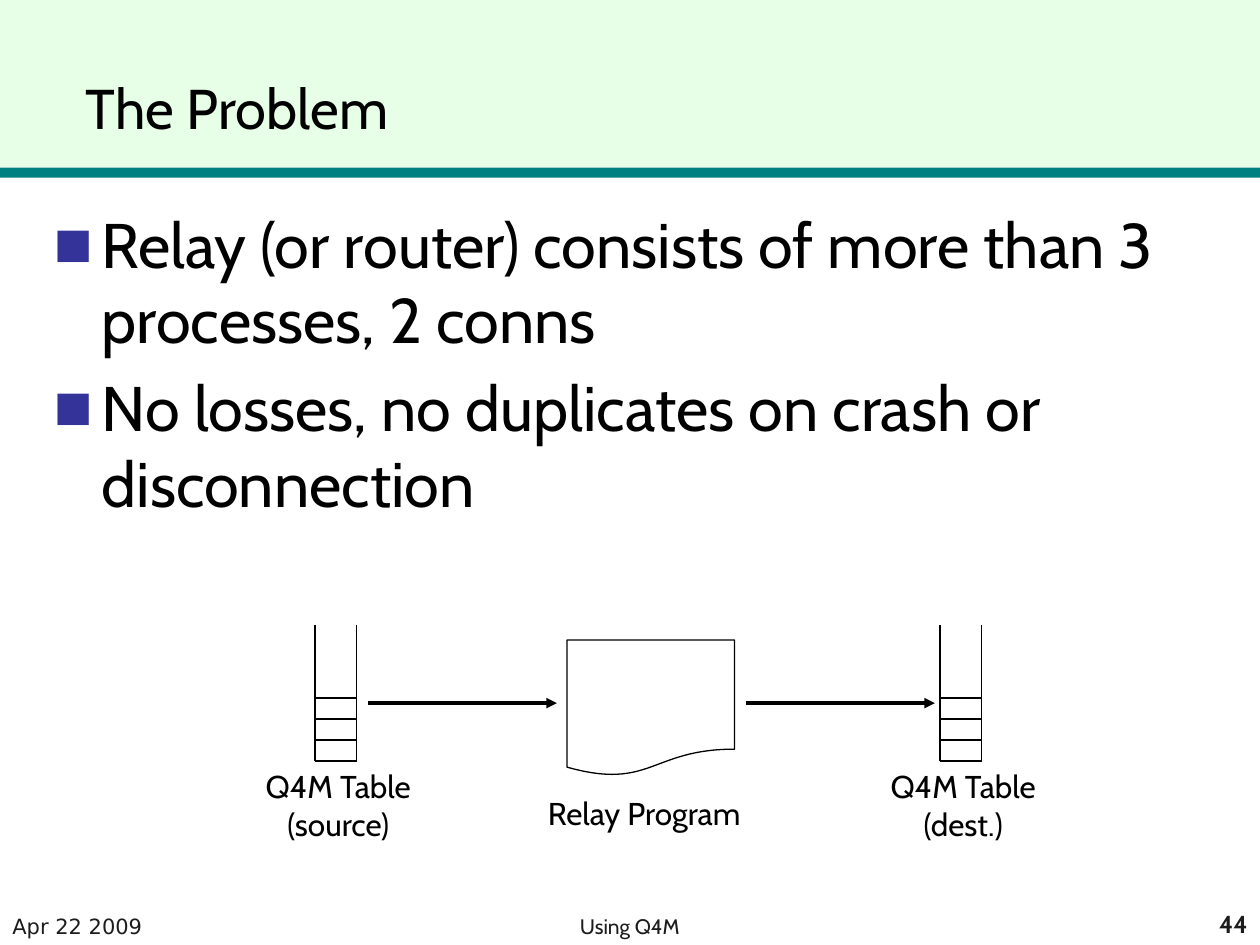
"""Build the slide that states the relay problem between two Q4M tables."""
import lxml.etree
import pptx
import pptx.dml.color
import pptx.enum.dml
import pptx.enum.shapes
import pptx.enum.text
import pptx.oxml
import pptx.oxml.ns
import pptx.util

Inches = pptx.util.Inches
Pt = pptx.util.Pt
RGBColor = pptx.dml.color.RGBColor
Align = pptx.enum.text.PP_ALIGN
Anchor = pptx.enum.text.MSO_ANCHOR
Shape = pptx.enum.shapes.MSO_SHAPE
qn = pptx.oxml.ns.qn

BLACK = RGBColor(0x00, 0x00, 0x00)
WHITE = RGBColor(0xFF, 0xFF, 0xFF)
MINT = RGBColor(0xE7, 0xFF, 0xE7)
TEAL = RGBColor(0x00, 0x80, 0x80)
NAVY = RGBColor(0x33, 0x33, 0x99)
INK = RGBColor(0x1C, 0x1C, 0x1C)
FONT = "Cabin"
PLAIN = "DejaVu Sans"


def add_bullet(para):
    """Give a paragraph a hanging square bullet."""
    props = para._p.get_or_add_pPr()
    props.set("marL", str(Inches(0.38)))
    props.set("indent", str(-Inches(0.38)))
    color = lxml.etree.SubElement(props, qn("a:buClr"))
    lxml.etree.SubElement(color, qn("a:srgbClr"), val=str(NAVY))
    lxml.etree.SubElement(props, qn("a:buSzPct"), val="65000")
    lxml.etree.SubElement(props, qn("a:buFont"), typeface=PLAIN)
    lxml.etree.SubElement(props, qn("a:buChar"), char="■")


def write_text(frame, lines, size=18, font=FONT, color=BLACK, bold=False,
               align=Align.LEFT, anchor=Anchor.TOP, wrap=True, gap=0,
               bullet=False):
    """Fill a text frame with formatted paragraphs."""
    frame.word_wrap = wrap
    frame.auto_size = pptx.enum.text.MSO_AUTO_SIZE.NONE
    frame.vertical_anchor = anchor
    for i, line in enumerate(lines):
        para = frame.add_paragraph() if i else frame.paragraphs[0]
        para.alignment = align
        para.space_before = Pt(gap if i else 0)
        if bullet:
            add_bullet(para)
        run = para.add_run()
        run.text = line
        run.font.size = Pt(size)
        run.font.name = font
        run.font.bold = bold
        run.font.color.rgb = color


def add_label(shapes, x, y, w, h, lines, **style):
    """Add a text box."""
    box = shapes.add_textbox(Inches(x), Inches(y), Inches(w), Inches(h))
    write_text(box.text_frame, lines, **style)


def add_block(shapes, kind, x, y, w, h, fill, line=None):
    """Add a filled preset shape with an optional outline."""
    block = shapes.add_shape(kind, Inches(x), Inches(y), Inches(w), Inches(h))
    block.shadow.inherit = False
    block.fill.solid()
    block.fill.fore_color.rgb = fill
    if line is None:
        block.line.fill.background()
    else:
        block.line.color.rgb = line
        block.line.width = Pt(0.75)
    return block


def add_line(shapes, x1, y1, x2, y2, width=0.75, arrow=False):
    """Add a straight black line, with an arrowhead at its end on request."""
    line = shapes.add_connector(
        pptx.enum.shapes.MSO_CONNECTOR.STRAIGHT,
        Inches(x1), Inches(y1), Inches(x2), Inches(y2))
    line.line.color.rgb = BLACK
    line.line.width = Pt(width)
    props = line.element.spPr
    if arrow:
        lxml.etree.SubElement(props.find(qn("a:ln")), qn("a:tailEnd"),
                              type="triangle")
    lxml.etree.SubElement(props, qn("a:effectLst"))


def add_queue(slide, x, role):
    """Draw an open-topped queue with stacked rows and its label."""
    shapes = slide.shapes.add_group_shape().shapes
    top, base, wide = 4.96, 6.04, 0.33
    for side in (x, x + wide):
        add_line(shapes, side, top, side, base)
    for row in range(4):
        y = base - row / 6
        add_line(shapes, x, y, x + wide, y)
    add_label(shapes, x - 0.5, base, 1.37, 0.71, ["Q4M Table", role],
              align=Align.CENTER, wrap=False)


def add_title(slide, text):
    """Place the title, with its soft text shadow, above the header bands."""
    title = slide.shapes.title
    title.left, title.top = Inches(0.58), Inches(0)
    title.width, title.height = Inches(9.42), Inches(1.17)
    write_text(title.text_frame, [text], size=32, anchor=Anchor.BOTTOM)
    fill = title.text_frame.paragraphs[0].runs[0].font._element.find(
        qn("a:solidFill"))
    glow = lxml.etree.Element(qn("a:effectLst"))
    cast = lxml.etree.SubElement(glow, qn("a:outerShdw"), dist="35921",
                                 dir="2700000")
    lxml.etree.SubElement(cast, qn("a:srgbClr"), val="C0C0C0")
    fill.addnext(glow)
    for y, h, color in ((0, 1.33, MINT), (1.33, 0.08, TEAL)):
        band = add_block(slide.shapes, Shape.RECTANGLE, 0, y, 10, h, color)
        title.element.addprevious(band.element)


def add_footer(slide):
    """Write the date, the talk name and the page number."""
    for x, w, text, style in (
            (0, 2.08, "Apr 22 2009", {"font": PLAIN}),
            (1, 8, "Using Q4M", {"align": Align.CENTER}),
            (7.92, 2.08, "44",
             {"size": 14, "bold": True, "align": Align.RIGHT})):
        add_label(slide.shapes, x, 7.17, w, 0.33, [text],
                  **{"size": 12, "color": INK, "anchor": Anchor.BOTTOM,
                     **style})


def main():
    """Build and save the slide."""
    deck = pptx.Presentation()
    deck.slide_width, deck.slide_height = Inches(10), Inches(7.5)
    slide = deck.slides.add_slide(deck.slide_layouts[5])
    shapes = slide.shapes
    add_title(slide, "The Problem")
    add_label(shapes, 0.33, 1.58, 9.67, 2.67, [
        "Relay (or router) consists of more than 3 processes, 2 conns",
        "No losses, no duplicates on crash or disconnection",
    ], size=36, gap=7, bullet=True)
    add_footer(slide)
    add_queue(slide, 2.5, "(source)")
    add_queue(slide, 7.46, "(dest.)")
    add_block(shapes, Shape.FLOWCHART_DOCUMENT, 4.5, 5.08, 1.33, 1.08,
              WHITE, BLACK)
    for x in (2.92, 5.92):
        add_line(shapes, x, 5.58, x + 1.5, 5.58, width=2, arrow=True)
    add_label(shapes, 4.25, 6.25, 1.82, 0.4, ["Relay Program"], wrap=False)
    deck.save("out.pptx")


if __name__ == "__main__":
    main()
